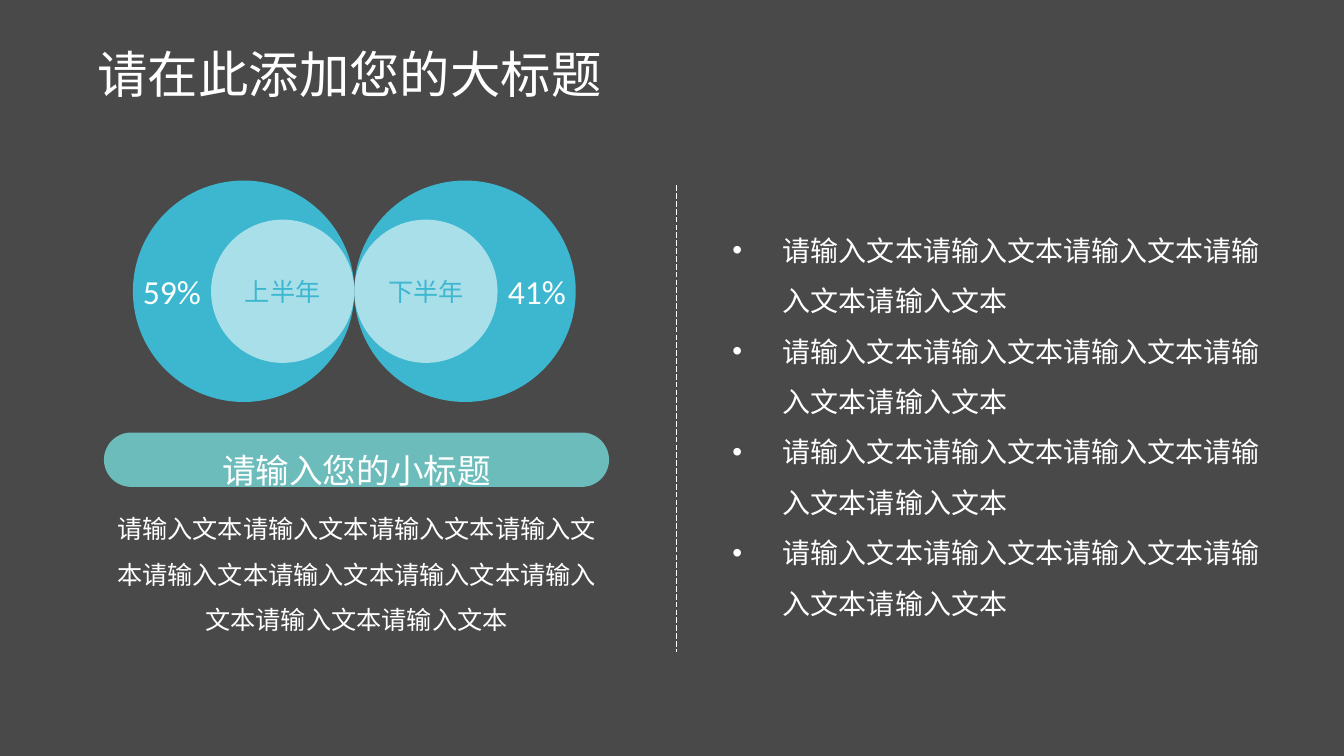
from lxml import etree
from pptx import Presentation
from pptx.dml.color import RGBColor
from pptx.enum.dml import MSO_LINE_DASH_STYLE as DASH
from pptx.enum.shapes import MSO_CONNECTOR, MSO_SHAPE
from pptx.enum.text import MSO_ANCHOR, PP_ALIGN
from pptx.oxml.ns import qn
from pptx.util import Cm, Pt

COLORS = {
    "background": "4D4D4D", "veil": "3B3B39", "white": "FFFFFF", "offwhite": "FEFFFF",
    "blue": "3DB7CF", "pale": "D8F1F5", "teal": "6CBCBC",
}
CJK, LATIN = "Noto Sans CJK SC", "Calibri"
PHRASE = "请输入文本"


def color(name):
    return RGBColor.from_string(COLORS[name])


def add_shape(s, kind, x, y, w, h, fill, opacity=100):
    sp = s.shapes.add_shape(kind, Cm(x), Cm(y), Cm(w), Cm(h))
    sp.shadow.inherit = False
    sp.fill.solid()
    sp.fill.fore_color.rgb = color(fill)
    sp.line.fill.background()
    if opacity < 100:
        clr = sp.fill._xPr.find(".//" + qn("a:srgbClr"))
        etree.SubElement(clr, qn("a:alpha"), val=str(opacity * 1000))
    return sp


def add_box(s, x, y, w, h):
    return s.shapes.add_textbox(Cm(x), Cm(y), Cm(w), Cm(h))


def write(sp, lines, size, ink="white", font=CJK, align=PP_ALIGN.LEFT,
          spacing=1.0, anchor=MSO_ANCHOR.MIDDLE, bullet=False):
    tf = sp.text_frame
    tf.word_wrap = True
    tf.vertical_anchor = anchor
    for i, line in enumerate(lines):
        p = tf.paragraphs[0] if i == 0 else tf.add_paragraph()
        p.alignment = align
        p.line_spacing = spacing
        if bullet:
            pPr = p._p.get_or_add_pPr()
            pPr.set("marL", str(Cm(1.27)))
            pPr.set("indent", str(-Cm(1.27)))
            etree.SubElement(pPr, qn("a:buFont"), typeface="Arial")
            etree.SubElement(pPr, qn("a:buChar"), char="•")
        r = p.add_run()
        r.text = line
        r.font.size = Pt(size)
        r.font.color.rgb = color(ink)
        r.font.name = font
        etree.SubElement(r._r.get_or_add_rPr(), qn("a:ea"), typeface=CJK)


def add_background(s, w, h):
    s.background.fill.solid()
    s.background.fill.fore_color.rgb = color("background")
    add_shape(s, MSO_SHAPE.RECTANGLE, 0, 0, w, h, "veil", 20)


def add_title(s, x, y, w, h):
    write(add_box(s, x, y, w, h), ["请在此添加您的大标题"], 36, spacing=0.9)


def add_circle_pair(s, x, y, d):
    """Two circles that touch, each with an inner circle at the touching point."""
    inner, label_w, label_h = 3.61, 2.79, 1.27
    mid = x + d
    halves = [
        ("上半年", "59%", x, mid - inner, x, PP_ALIGN.LEFT),
        ("下半年", "41%", mid, mid, mid + d - label_w, PP_ALIGN.RIGHT),
    ]
    for name, share, outer_x, inner_x, label_x, align in halves:
        add_shape(s, MSO_SHAPE.OVAL, outer_x, y, d, d, "blue")
        sp = add_shape(s, MSO_SHAPE.OVAL, inner_x, y + (d - inner) / 2, inner, inner, "pale", 70)
        write(sp, [name], 18, "blue", align=PP_ALIGN.CENTER)
        label = add_box(s, label_x, y + (d - label_h) / 2, label_w, label_h)
        write(label, [share], 24, "offwhite", LATIN, align, anchor=MSO_ANCHOR.TOP)


def add_summary(s, x, y, w, h):
    """Rounded heading with a centred paragraph below it."""
    head_h = 1.37
    body = add_box(s, x, y + head_h, w, h - head_h)
    write(body, [PHRASE * 10], 18, align=PP_ALIGN.CENTER, spacing=1.5)
    pill = add_shape(s, MSO_SHAPE.ROUNDED_RECTANGLE, x, y, w, head_h, "teal")
    pill.adjustments[0] = 0.5
    write(pill, ["请输入您的小标题"], 24, "offwhite", align=PP_ALIGN.CENTER, spacing=1.5)


def add_divider(s, x, y, h):
    line = s.shapes.add_connector(MSO_CONNECTOR.STRAIGHT, Cm(x), Cm(y), Cm(x), Cm(y + h))
    line.line.color.rgb = color("white")
    line.line.width = Pt(0.5)
    line.line.dash_style = DASH.LONG_DASH
    etree.SubElement(line._element.spPr, qn("a:effectLst"))


def add_points(s, x, y, w, h):
    write(add_box(s, x, y, w, h), [PHRASE * 5] * 4, 20, spacing=1.5, bullet=True)


def main():
    prs = Presentation()
    prs.slide_width, prs.slide_height = Cm(33.87), Cm(19.05)
    s = prs.slides.add_slide(prs.slide_layouts[6])

    # Background and title
    add_background(s, 33.87, 19.05)
    add_title(s, 2.21, 0.76, 27.79, 2.36)

    # Left side: shares and summary
    add_circle_pair(s, 3.35, 4.55, 5.58)
    add_summary(s, 2.62, 10.9, 12.73, 5.38)

    # Right side: divider and bullet points
    add_divider(s, 17.04, 4.67, 11.76)
    add_points(s, 18.21, 4.67, 14.07, 11.73)

    prs.save("out.pptx")


if __name__ == "__main__":
    main()
